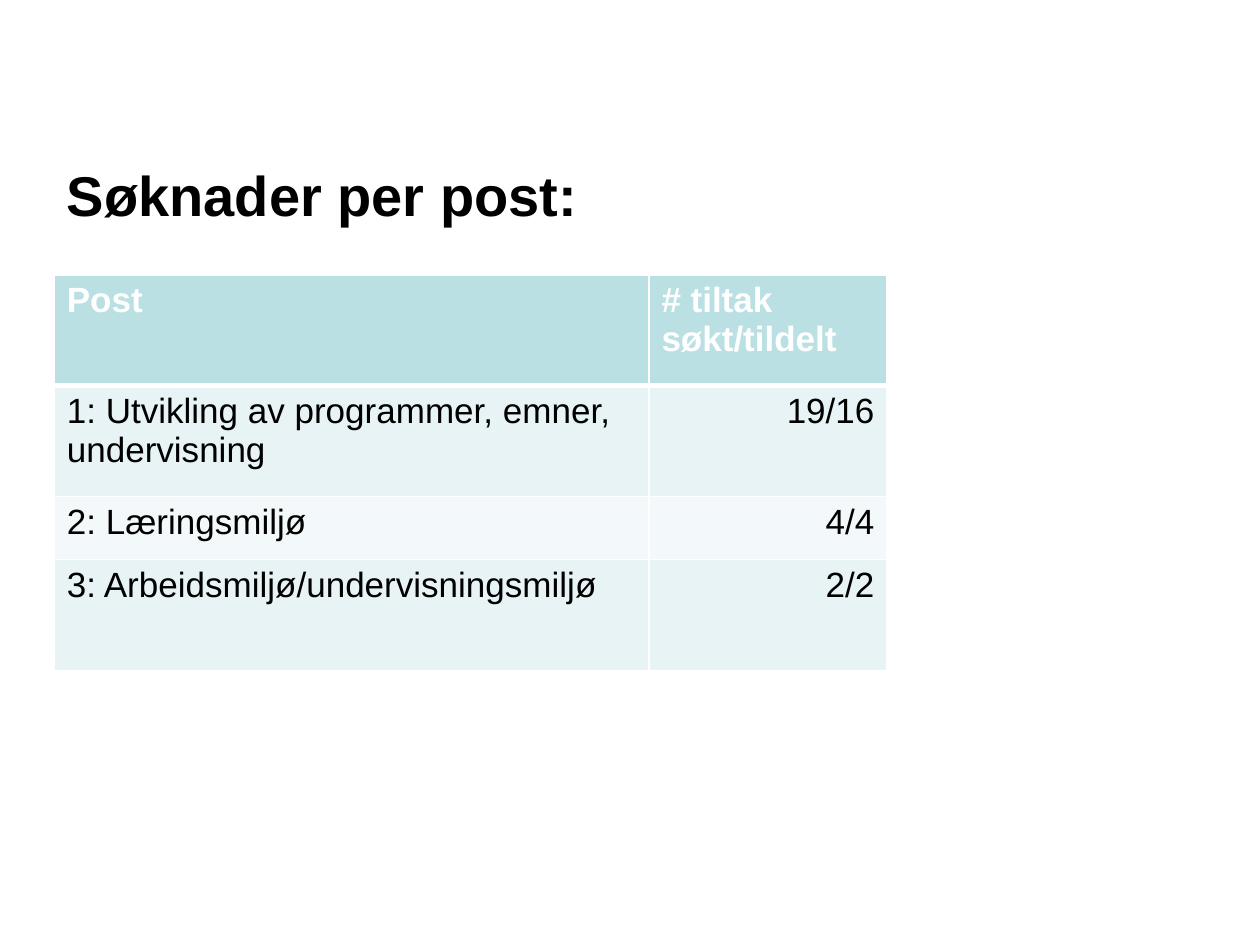
"""Build a slide with a table of applications per budget post."""
from dataclasses import dataclass

from lxml import etree
from pptx import Presentation
from pptx.dml.color import RGBColor
from pptx.enum.text import MSO_ANCHOR, MSO_AUTO_SIZE, PP_ALIGN
from pptx.oxml.ns import qn
from pptx.util import Pt

LEFT, RIGHT = PP_ALIGN.LEFT, PP_ALIGN.RIGHT
MIDDLE = MSO_ANCHOR.MIDDLE
NO_AUTOFIT = MSO_AUTO_SIZE.NONE


@dataclass(frozen=True)
class Theme:
    font: str = "Arial"
    title_size: float = 32
    table_size: float = 20
    text: str = "000000"
    white: str = "FFFFFF"
    header: str = "BBE0E3"
    bands: tuple[str, str] = ("E7F3F4", "F3F9FA")
    thin: float = 1
    thick: float = 3


@dataclass(frozen=True)
class PostRow:
    post: str
    count: str
    height: float = 63.4


THEME = Theme()
MARGIN = 31
COLUMN_WIDTHS = (339.8, 136.1)
HEADER = PostRow("Post", "# tiltak søkt/tildelt")
POSTS = (
    PostRow("1: Utvikling av programmer, emner, undervisning", "19/16"),
    PostRow("2: Læringsmiljø", "4/4", 36),
    PostRow("3: Arbeidsmiljø/undervisningsmiljø", "2/2"),
)


def write_text(frame, text: str, *, size: float, color: str = THEME.text,
               bold: bool = False, align=LEFT) -> None:
    para = frame.paragraphs[0]
    para.alignment = align
    span = para.add_run()
    span.text = text
    span.font.name = THEME.font
    span.font.size = Pt(size)
    span.font.bold = bold
    span.font.color.rgb = RGBColor.from_string(color)


def set_borders(cell, top: float, bottom: float) -> None:
    properties = cell._tc.get_or_add_tcPr()
    widths = {"a:lnL": THEME.thin, "a:lnR": THEME.thin, "a:lnT": top, "a:lnB": bottom}
    for position, (tag, width) in enumerate(widths.items()):
        line = etree.Element(qn(tag), w=str(Pt(width)))
        fill = etree.SubElement(line, qn("a:solidFill"))
        etree.SubElement(fill, qn("a:srgbClr"), val=THEME.white)
        properties.insert(position, line)


def add_title(slide, text: str) -> None:
    title = slide.shapes.title
    title.left, title.top = Pt(MARGIN), Pt(66.2)
    title.width, title.height = Pt(606.2), Pt(90)
    title.text_frame.auto_size = NO_AUTOFIT
    title.text_frame.vertical_anchor = MIDDLE
    write_text(title.text_frame, text, size=THEME.title_size, bold=True)


def add_post_table(slide, rows: tuple[PostRow, ...]) -> None:
    table = slide.shapes.add_table(
        len(rows), len(COLUMN_WIDTHS), Pt(MARGIN), Pt(157),
        Pt(sum(COLUMN_WIDTHS)), Pt(sum(row.height for row in rows))).table
    for column, width in zip(table.columns, COLUMN_WIDTHS):
        column.width = Pt(width)
    for index, row in enumerate(rows):
        table.rows[index].height = Pt(row.height)
        is_header = index == 0
        fill = THEME.header if is_header else THEME.bands[(index - 1) % 2]
        for column, text in enumerate((row.post, row.count)):
            cell = table.cell(index, column)
            cell.fill.solid()
            cell.fill.fore_color.rgb = RGBColor.from_string(fill)
            set_borders(cell, top=THEME.thick if index == 1 else THEME.thin,
                        bottom=THEME.thick if is_header else THEME.thin)
            write_text(cell.text_frame, text, size=THEME.table_size, bold=is_header,
                       color=THEME.white if is_header else THEME.text,
                       align=RIGHT if column and not is_header else LEFT)


def main() -> None:
    deck = Presentation()
    deck.slide_width, deck.slide_height = Pt(720), Pt(540)
    page = deck.slides.add_slide(deck.slide_layouts.get_by_name("Title Only"))
    add_title(page, "Søknader per post:")
    add_post_table(page, (HEADER, *POSTS))
    deck.save("out.pptx")


if __name__ == "__main__":
    main()
